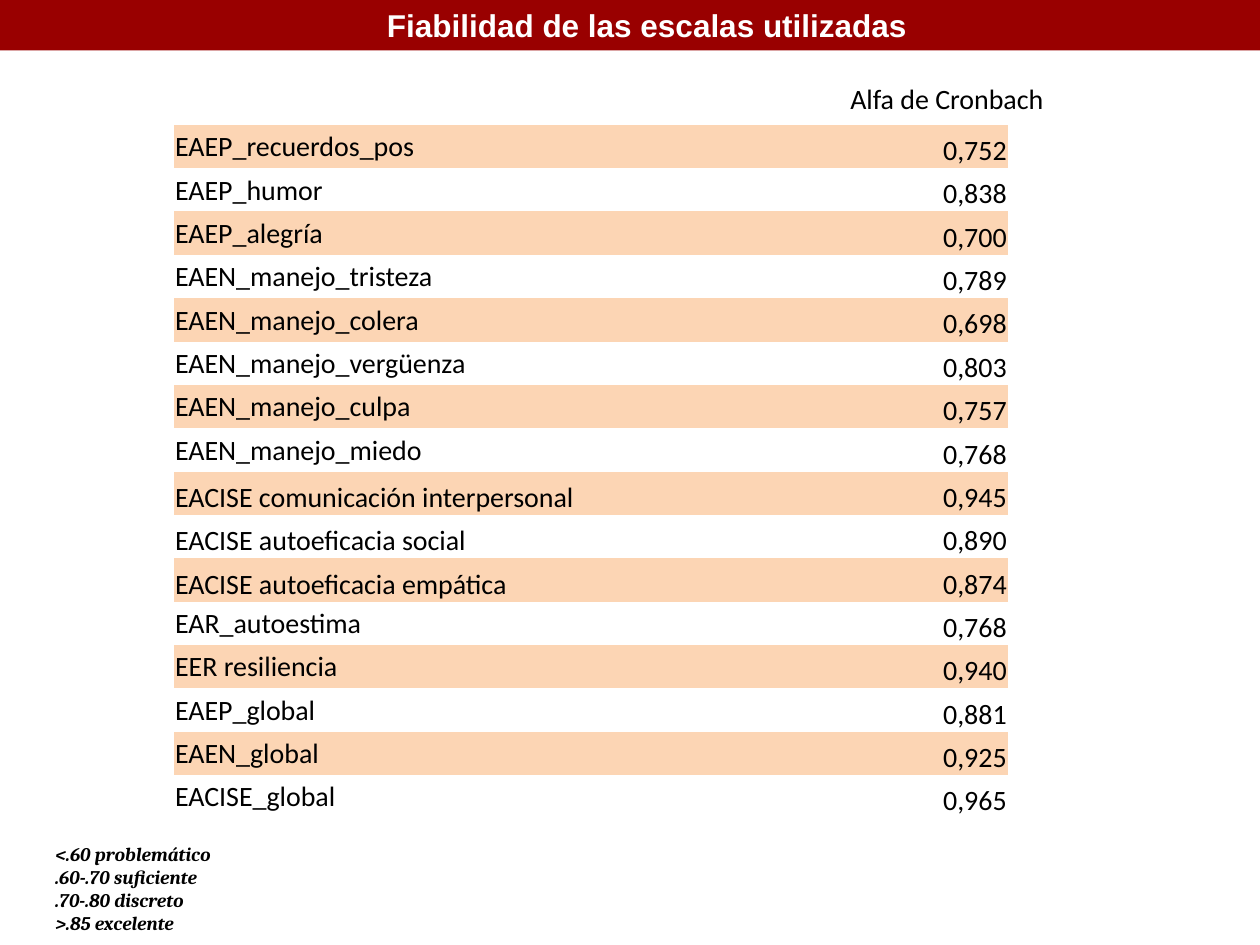
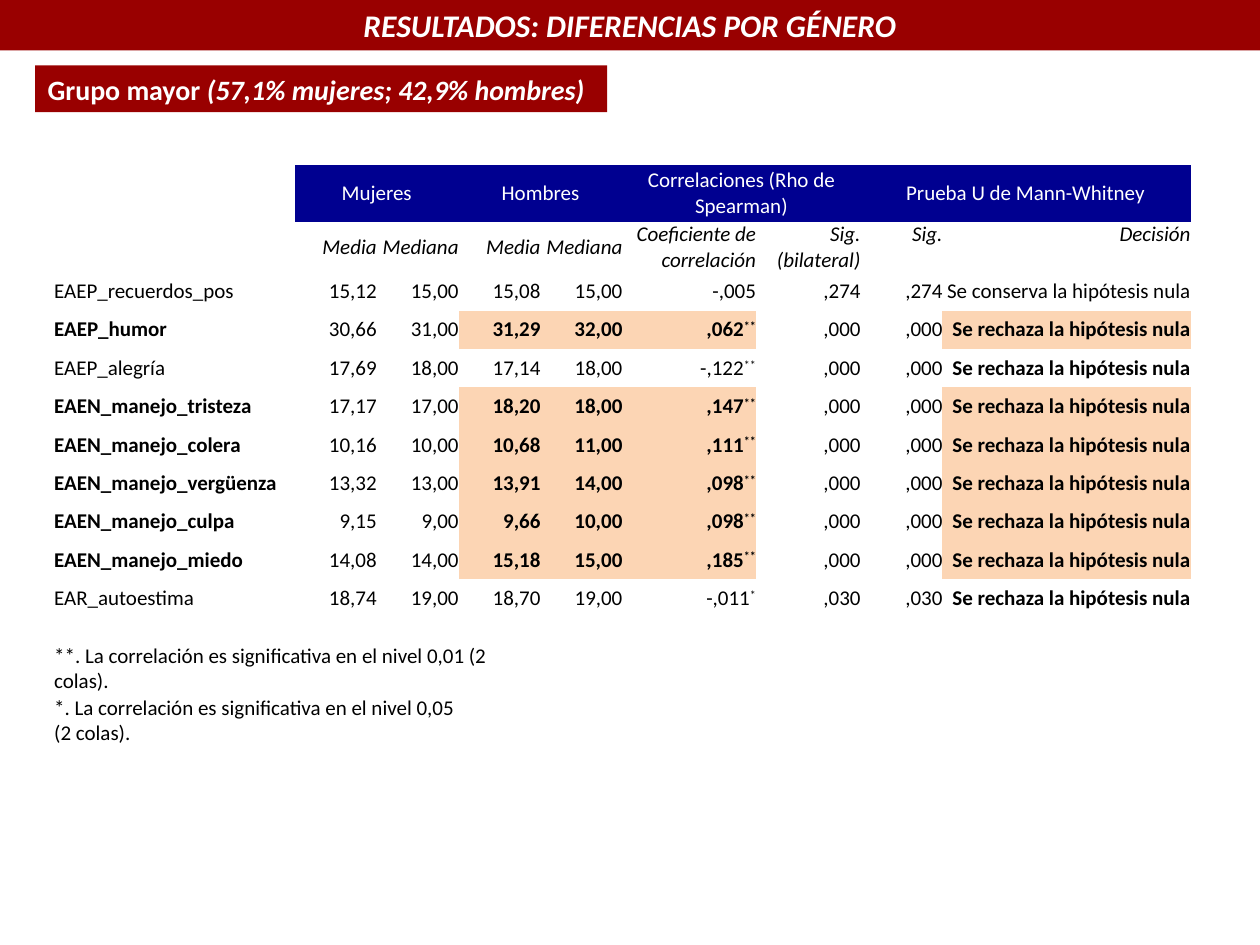
import dataclasses
import pptx
import pptx.dml.color
import pptx.enum.shapes
import pptx.enum.text
import pptx.util

Inches = pptx.util.Inches
Align = pptx.enum.text.PP_ALIGN
Anchor = pptx.enum.text.MSO_ANCHOR


@dataclasses.dataclass(frozen=True)
class Theme:
    red: str = "990000"
    navy: str = "000090"
    peach: str = "FCD5B4"
    white: str = "FFFFFF"
    black: str = "000000"
    body: str = "Calibri"
    head: int = 18
    text: int = 16
    small: int = 12
    note: int = 11


theme = Theme()
rgb = pptx.dml.color.RGBColor.from_string


def write(frame, lines, size, color=theme.black, face=theme.body,
          bold=False, slant=False, align=Align.LEFT):
    for n, line in enumerate(lines):
        para = frame.add_paragraph() if n else frame.paragraphs[0]
        para.alignment = align
        font = para.font
        font.name, font.size = face, pptx.util.Pt(size)
        font.bold, font.italic = bold, slant
        font.color.rgb = rgb(color)
        if line:
            para.add_run().text = line
        else:
            para._p.get_or_add_endParaRPr().set("sz", str(size * 100))
    return frame.paragraphs[0]


def grid(slide, left, top, cols, rows, inset):
    table = slide.shapes.add_table(
        len(rows), len(cols), Inches(left), Inches(top),
        Inches(sum(cols)), Inches(sum(rows))).table
    table.first_row = table.horz_banding = False
    table._tbl.tblPr[0].text = "{2D5ABB26-0587-4C30-8999-92F81FD0307C}"
    for col, width in zip(table.columns, cols):
        col.width = Inches(width)
    for row, height in zip(table.rows, rows):
        row.height = Inches(height)
    for cell in table.iter_cells():
        cell.margin_left = cell.margin_right = cell.margin_top = Inches(inset)
        cell.margin_bottom = 0
        cell.vertical_anchor = Anchor.MIDDLE
        cell.fill.background()
    return table


deck = pptx.Presentation()
deck.slide_width, deck.slide_height = Inches(10), Inches(7.5)
scales, gender = [deck.slides.add_slide(deck.slide_layouts[6]) for _ in range(2)]

for slide, boxes in ((scales, [(0, 0, 10, 0.4)]),
                     (gender, [(0, 0, 10, 0.4), (0.28, 0.52, 4.54, 0.37)])):
    for box in boxes:
        band = slide.shapes.add_shape(
            pptx.enum.shapes.MSO_SHAPE.RECTANGLE, *map(Inches, box))
        band.fill.solid()
        band.fill.fore_color.rgb = rgb(theme.red)
        band.line.fill.background()
        band.shadow.inherit = False

band.text_frame.word_wrap = False
write(band.text_frame, ["Grupo mayor "], theme.text, theme.white, bold=True)
share = band.text_frame.paragraphs[0].add_run()
share.text = "(57,1% mujeres; 42,9% hombres)"
share.font.italic = True

white = dict(color=theme.white, bold=True, align=Align.CENTER)
labels = [
    (scales, (2.95, 0, 4.37, 0.4), ["Fiabilidad de las escalas utilizadas"],
     theme.head, dict(white, face="Arial")),
    (scales, (6.65, 0.6, 1.76, 0.37), ["Alfa de Cronbach"], theme.text, {}),
    (scales, (0.34, 6.63, 3.41, 0.84),
     ["<.60 problemático", ".60-.70 suficiente", ".70-.80 discreto", ">.85 excelente"],
     theme.note, dict(face="Cambria", bold=True, slant=True)),
    (gender, (0, 0, 10, 0.4), ["RESULTADOS: DIFERENCIAS POR GÉNERO"],
     theme.head, dict(white, slant=True)),
]
for slide, box, lines, size, style in labels:
    frame = slide.shapes.add_textbox(*map(Inches, box)).text_frame
    frame.word_wrap = len(lines) > 1 or slide is gender
    frame.vertical_anchor = Anchor.MIDDLE if len(lines) > 1 else Anchor.TOP
    write(frame, lines, size, **style)

alphas = [
    ("EAEP_recuerdos_pos", "0,752"),
    ("EAEP_humor", "0,838"),
    ("EAEP_alegría", "0,700"),
    ("EAEN_manejo_tristeza", "0,789"),
    ("EAEN_manejo_colera", "0,698"),
    ("EAEN_manejo_vergüenza", "0,803"),
    ("EAEN_manejo_culpa", "0,757"),
    ("EAEN_manejo_miedo", "0,768"),
    ("EACISE comunicación interpersonal", "0,945"),
    ("EACISE autoeficacia social", "0,890"),
    ("EACISE autoeficacia empática", "0,874"),
    ("EAR_autoestima", "0,768"),
    ("EER resiliencia", "0,940"),
    ("EAEP_global", "0,881"),
    ("EAEN_global", "0,925"),
    ("EACISE_global", "0,965"),
]
table = grid(scales, 1.38, 0.99, [4.78, 1.84], [5.51 / len(alphas)] * len(alphas), 0.01)
for r, (scale, alpha) in enumerate(alphas):
    name, value = table.cell(r, 0), table.cell(r, 1)
    write(name.text_frame, [scale], theme.text)
    write(value.text_frame, [alpha], theme.text, align=Align.RIGHT)
    value.vertical_anchor = Anchor.BOTTOM
    if scale.startswith("EACISE "):
        name.vertical_anchor = Anchor.BOTTOM
    if r % 2 == 0:
        for cell in (name, value):
            cell.fill.solid()
            cell.fill.fore_color.rgb = rgb(theme.peach)

groups = ["Mujeres", "Hombres", "Correlaciones (Rho de Spearman)",
          "Prueba U de Mann-Whitney"]
heads = ["", "Media", "Mediana", "Media", "Mediana", "Coeficiente de correlación",
         "Sig. (bilateral)", "Sig.", "Decisión"]
tests = [
    ("EAEP_recuerdos_pos", "15,12", "15,00", "15,08", "15,00", "-,005", ",274"),
    ("EAEP_humor", "30,66", "31,00", "31,29", "32,00", ",062**", ",000"),
    ("EAEP_alegría", "17,69", "18,00", "17,14", "18,00", "-,122**", ",000"),
    ("EAEN_manejo_tristeza", "17,17", "17,00", "18,20", "18,00", ",147**", ",000"),
    ("EAEN_manejo_colera", "10,16", "10,00", "10,68", "11,00", ",111**", ",000"),
    ("EAEN_manejo_vergüenza", "13,32", "13,00", "13,91", "14,00", ",098**", ",000"),
    ("EAEN_manejo_culpa", "9,15", "9,00", "9,66", "10,00", ",098**", ",000"),
    ("EAEN_manejo_miedo", "14,08", "14,00", "15,18", "15,00", ",185**", ",000"),
    ("EAR_autoestima", "18,74", "19,00", "18,70", "19,00", "-,011*", ",030"),
]
notes = [
    ("**. La correlación es significativa en el nivel 0,01 (2 colas).", 3),
    ("*. La correlación es significativa en el nivel 0,05 (2 colas).", 2),
]
table = grid(gender, 0.43, 1.31,
             [1.91, 0.65, 0.65, 0.65, 0.65, 1.06, 0.83, 0.65, 1.97],
             [0.45, 0.4] + [0.305] * len(tests) + [0.2, 0.41, 0.41], 0)

for n, group in enumerate(groups):
    cell = table.cell(0, 2 * n + 1)
    cell.merge(table.cell(0, 2 * n + 2))
    cell.fill.solid()
    cell.fill.fore_color.rgb = rgb(theme.navy)
    write(cell.text_frame, [group], theme.small, theme.white, align=Align.CENTER)

for c, head in enumerate(heads):
    cell = table.cell(1, c)
    write(cell.text_frame, [head], theme.small, slant=True, align=Align.RIGHT)
    if c > 6:
        cell.vertical_anchor = Anchor.TOP

for r, test in enumerate(tests, 2):
    keep = test[-1] > ",05"
    verb = "conserva" if keep else "rechaza"
    hot = not test[5].startswith("-")
    for c, value in enumerate(test + (test[-1], f"Se {verb} la hipótesis nula")):
        cell = table.cell(r, c)
        plain = value.rstrip("*")
        para = write(cell.text_frame, [plain], theme.small,
                     bold=hot and c in (0, 3, 4, 5) or c == 8 and not keep,
                     align=Align.RIGHT if c else Align.LEFT)
        if plain != value:
            stars = para.add_run()
            stars.text = value[len(plain):]
            stars.font._element.set("baseline", "30000")
        if hot and c in (3, 4, 5, 8):
            cell.fill.solid()
            cell.fill.fore_color.rgb = rgb(theme.peach)

first = len(tests) + 3
for r, (note, last) in enumerate(notes, first):
    cell = table.cell(r, 0)
    cell.merge(table.cell(r, last))
    cell.vertical_anchor = Anchor.BOTTOM
    write(cell.text_frame, [note], theme.small)

for cell in table.iter_cells():
    if not cell.text_frame.text:
        write(cell.text_frame, [""], theme.small)

deck.save("out.pptx")
